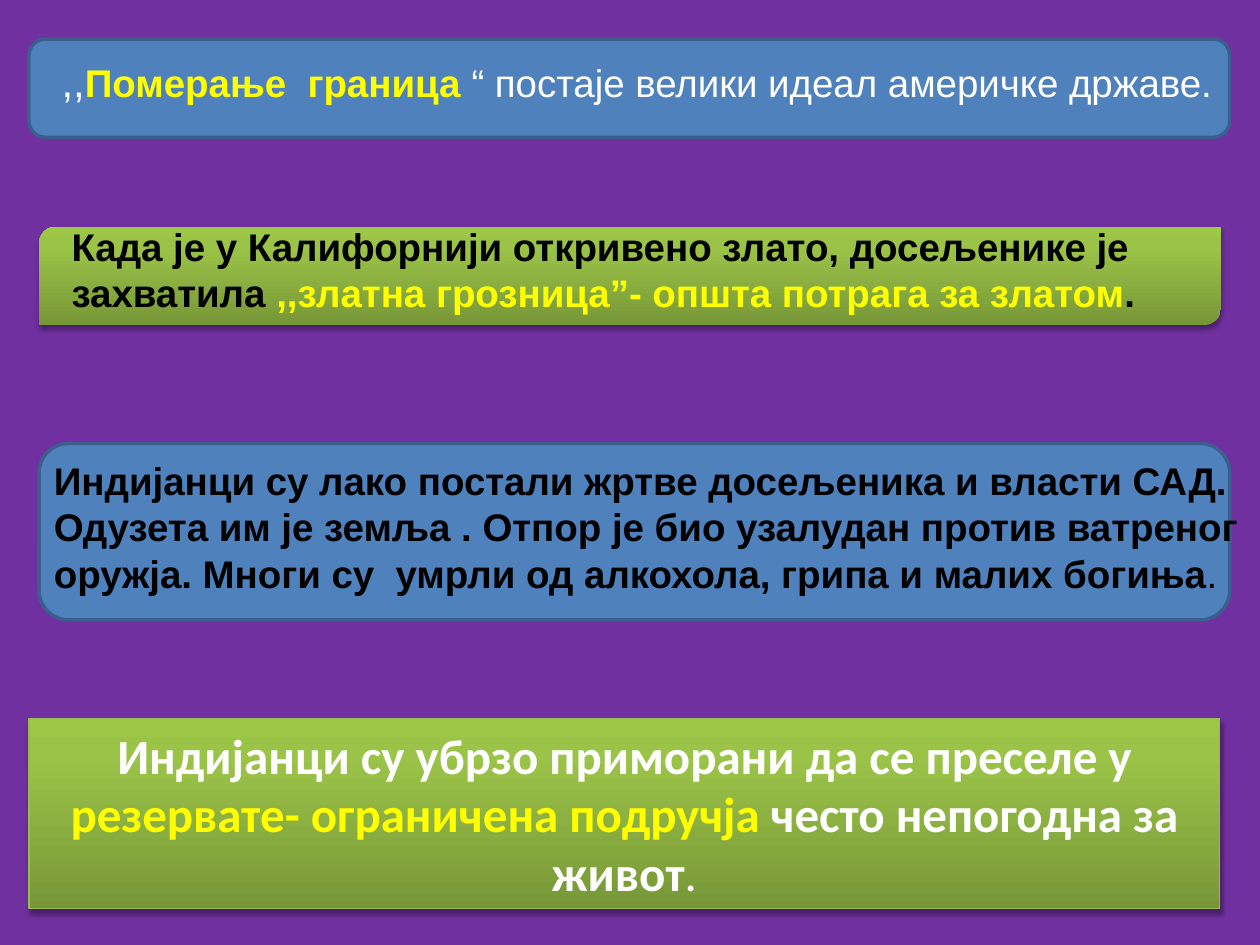
from copy import deepcopy
from lxml.etree import SubElement
from pptx import Presentation
from pptx.dml.color import RGBColor
from pptx.enum.shapes import MSO_SHAPE as Kind
from pptx.enum.text import MSO_ANCHOR as Anchor, MSO_AUTO_SIZE as Fit, PP_ALIGN as Align
from pptx.oxml.ns import qn
from pptx.util import Inches, Pt

PURPLE = RGBColor(0x70, 0x30, 0xA0)
BLUE = RGBColor(0x4F, 0x81, 0xBD)
NAVY = RGBColor(0x3A, 0x5F, 0x8C)
EDGE = RGBColor(0x98, 0xB9, 0x55)
GREENS = [(0, RGBColor(0x77, 0x97, 0x37)), (0.8, RGBColor(0x9B, 0xC3, 0x48)),
          (1, RGBColor(0x9D, 0xC7, 0x46))]
WHITE = RGBColor(0xFF, 0xFF, 0xFF)
BLACK = RGBColor(0, 0, 0)
YELLOW = RGBColor(0xFF, 0xFF, 0)

deck = Presentation()
deck.slide_width, deck.slide_height = Inches(10), Inches(7.5)
slide = deck.slides.add_slide(deck.slide_layouts[6])
slide.background.fill.solid()
slide.background.fill.fore_color.rgb = PURPLE


def add_panel(kind, box, green):
    panel = slide.shapes.add_shape(kind, *map(Inches, box))
    panel.shadow.inherit = False
    if not green:
        panel.fill.solid()
        panel.fill.fore_color.rgb = BLUE
        panel.line.color.rgb = NAVY
        panel.line.width = Pt(2)
        return panel
    # Three-stop gradient, dark at the bottom
    panel.line.fill.background()
    panel.fill.gradient()
    panel.fill.gradient_angle = 90
    props = panel._element.spPr
    stops = props.find(qn("a:gradFill")).find(qn("a:gsLst"))
    stops.append(deepcopy(stops[-1]))
    for stop, (place, color) in zip(panel.fill.gradient_stops, GREENS):
        stop.position = place
        stop.color.rgb = color
    # Soft shadow below
    shade = SubElement(props.find(qn("a:effectLst")), qn("a:outerShdw"),
                       blurRad=str(Pt(3.1)), dist=str(Pt(1.8)),
                       dir="5400000", rotWithShape="0")
    tone = SubElement(shade, qn("a:srgbClr"), val="000000")
    SubElement(tone, qn("a:alpha"), val="35000")
    return panel


def write(shape, font, runs):
    frame = shape.text_frame
    frame.word_wrap = True
    frame.auto_size = Fit.SHAPE_TO_FIT_TEXT
    for text, size, color, bold in runs:
        run = frame.paragraphs[0].add_run()
        run.text = text
        run.font.name = font
        run.font.size = Pt(size)
        run.font.bold = bold
        run.font.color.rgb = color


# Three panels, each with a text box over it
rows = [
    (Kind.ROUNDED_RECTANGLE, (0.23, 0.31, 9.53, 0.78), False, (0.39, 0.39, 9.38, 0.5), [
        (",,", 24, WHITE, False),
        ("Померање  граница ", 22, YELLOW, True),
        ("“ постаје велики идеал америчке државе.", 22, WHITE, False)]),
    (Kind.ROUND_2_DIAG_RECTANGLE, (0.31, 1.8, 9.38, 0.78), True, (0.47, 1.72, 9.06, 0.84), [
        ("Када је у Калифорнији откривено злато, досељенике је захватила", 22, BLACK, True),
        (" ,,златна грозница”- општа потрага за златом", 22, YELLOW, True),
        (".", 22, BLACK, True)]),
    (Kind.ROUNDED_RECTANGLE, (0.31, 3.52, 9.45, 1.4), False, (0.33, 3.58, 9.67, 1.21), [
        ("Индијанци су лако постали жртве досељеника и власти САД. "
         "Одузета им је земља . Отпор је био узалудан против ватреног "
         "оружја. Многи су  умрли од алкохола, грипа и малих богиња", 22, BLACK, True),
        (".", 22, BLACK, False)]),
]
for kind, box, green, area, runs in rows:
    add_panel(kind, box, green)
    write(slide.shapes.add_textbox(*map(Inches, area)), "Arial", runs)

# Closing panel holds its own text
last = add_panel(Kind.RECTANGLE, (0.23, 5.7, 9.45, 1.51), True)
last.line.color.rgb = EDGE
last.line.width = Pt(0.75)
write(last, "Calibri", [
    ("Индијанци су убрзо приморани да се преселе у ", 28, WHITE, True),
    ("резервате- ограничена подручја ", 28, YELLOW, True),
    ("често непогодна за живот", 28, WHITE, True),
    (".", 28, WHITE, False)])
last.text_frame.vertical_anchor = Anchor.MIDDLE
last.text_frame.paragraphs[0].alignment = Align.CENTER

deck.save("out.pptx")
